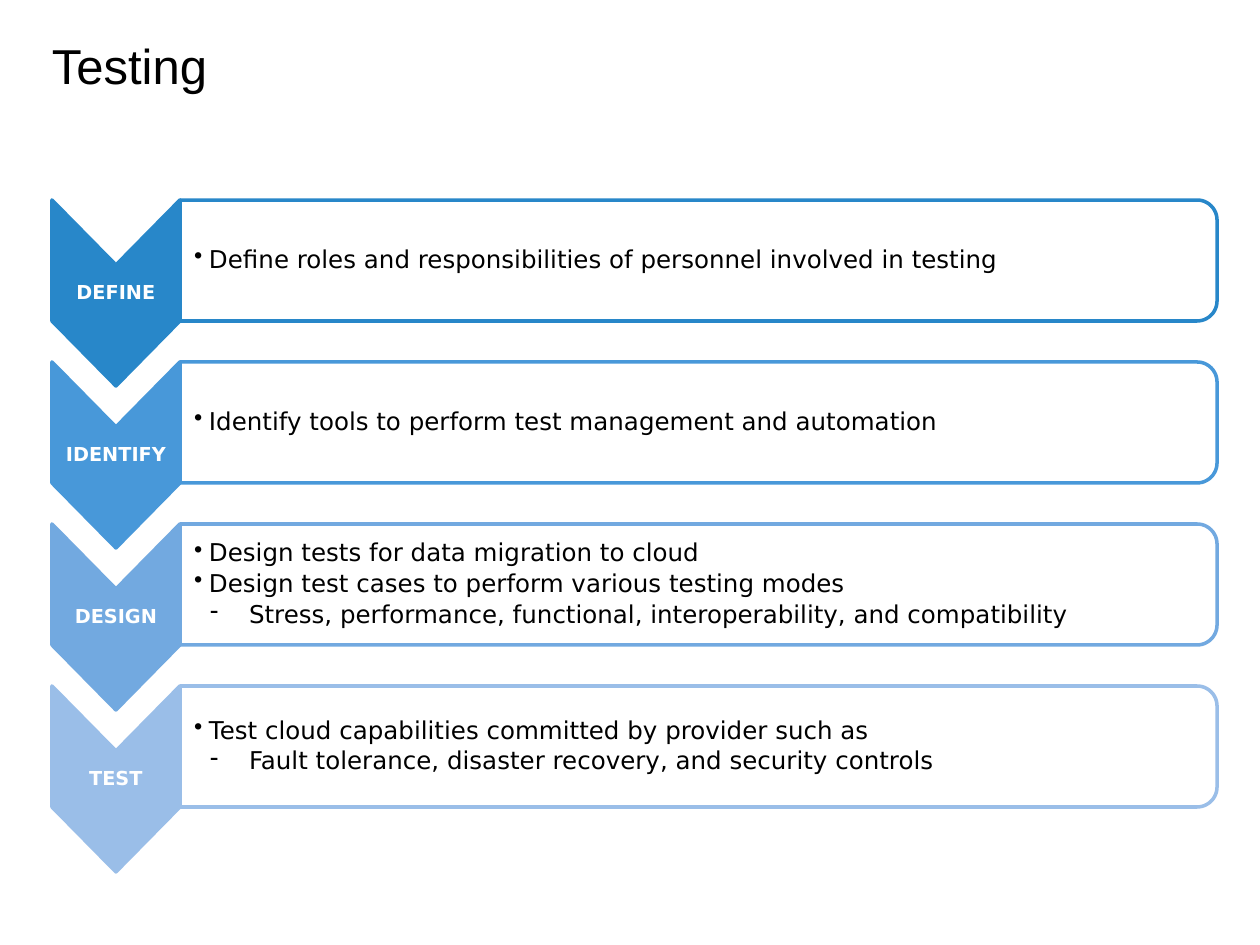
"""Build the Testing slide with four labelled chevron rows."""
from math import cos, pi, sin

from lxml import etree
from pptx import Presentation
from pptx.dml.color import RGBColor
from pptx.enum.text import MSO_ANCHOR, MSO_AUTO_SIZE, PP_ALIGN
from pptx.oxml.ns import qn
from pptx.util import Emu, Pt

TOP, MIDDLE = MSO_ANCHOR.TOP, MSO_ANCHOR.MIDDLE
LEFT, CENTER = PP_ALIGN.LEFT, PP_ALIGN.CENTER
NO_FIT = MSO_AUTO_SIZE.NONE
EMU_PER_PX = 914400 / 126
COLORS = {"black": "000000", "white": "FFFFFF", "define": "2887C9",
          "identify": "4898D9", "design": "72A9E0", "test": "9ABEE8"}
FONTS = {
    "title": {"name": "Arial", "size": Pt(28), "bold": False},
    "label": {"name": "DejaVu Sans", "size": Pt(11), "bold": True},
    "list": {"name": "DejaVu Sans", "size": Pt(14), "bold": False},
}
BULLETS = {1: ("•", 15, 15), 2: ("-", 55, 39)}
ROWS = [
    ("define", [(1, "Define roles and responsibilities of personnel involved in testing")]),
    ("identify", [(1, "Identify tools to perform test management and automation")]),
    ("design", [
        (1, "Design tests for data migration to cloud"),
        (1, "Design test cases to perform various testing modes"),
        (2, "Stress, performance, functional, interoperability, and compatibility")]),
    ("test", [
        (1, "Test cloud capabilities committed by provider such as"),
        (2, "Fault tolerance, disaster recovery, and security controls")]),
]
MARGIN, SPLIT, RIGHT = 52, 180, 1217
FIRST_TOP, PITCH, HEIGHT, NOTCH, RADIUS = 200, 162, 121, 65, 20


def px(value):
    return Emu(round(value * EMU_PER_PX))


def color(name):
    return RGBColor.from_string(COLORS[name])


def apply(target, values):
    for name, value in values.items():
        setattr(target, name, value)


class SlideBuilder:
    """Hold the slide and draw each kind of element in its style."""

    def __init__(self, page):
        self.page = page

    def frame(self, box, insets, anchor):
        sides = ("margin_left", "margin_top", "margin_right", "margin_bottom")
        apply(box.text_frame, {"word_wrap": True, "auto_size": NO_FIT, "vertical_anchor": anchor,
                               **dict(zip(sides, map(px, insets)))})
        return box.text_frame

    def fill_para(self, para, text, style, ink, align, after):
        apply(para, {"alignment": align, "line_spacing": 0.9,
                     "space_before": Pt(0), "space_after": Pt(after)})
        span = para.add_run()
        span.text = text
        apply(span.font, FONTS[style])
        span.font.color.rgb = color(ink)

    def title(self, text):
        box = self.page.shapes.title
        apply(box, {"left": px(MARGIN), "top": px(42), "width": px(1166), "height": px(84)})
        frame = self.frame(box, (0, 0, 0, 0), TOP)
        self.fill_para(frame.paragraphs[0], text, "title", "black", LEFT, 0)

    def outline(self, points, fill, line):
        start, *rest = [(px(x), px(y)) for x, y in points]
        builder = self.page.shapes.build_freeform(*start, scale=1.0)
        builder.add_line_segments(rest, close=True)
        box = builder.convert_to_shape()
        box.shadow.inherit = False
        box.fill.solid()
        box.fill.fore_color.rgb = color(fill)
        box.line.color.rgb = color(line)
        box.line.width = Pt(2)
        return box

    def chevron(self, top, name):
        bottom, center = top + HEIGHT, (MARGIN + SPLIT) / 2
        points = [(SPLIT, top), (SPLIT, bottom), (center, bottom + NOTCH),
                  (MARGIN, bottom), (MARGIN, top), (center, top + NOTCH)]
        frame = self.frame(self.outline(points, name, name), (1, 57, 1, 57), MIDDLE)
        self.fill_para(frame.paragraphs[0], name.upper(), "label", "white", CENTER, 4.5)

    def corner(self, x, y, start):
        angles = [start + step * pi / 24 for step in range(13)]
        return [(x + RADIUS * cos(angle), y + RADIUS * sin(angle)) for angle in angles]

    def panel(self, top, name, items):
        bottom = top + HEIGHT
        points = [(SPLIT, top), *self.corner(RIGHT - RADIUS, top + RADIUS, -pi / 2),
                  *self.corner(RIGHT - RADIUS, bottom - RADIUS, 0), (SPLIT, bottom)]
        box = self.outline(points, "white", name)
        tint = box.element.spPr.find(qn("a:solidFill"))[0]
        etree.SubElement(tint, qn("a:alpha"), val="90000")
        frame = self.frame(box, (14, 6, 6, 6), MIDDLE)
        for index, (level, text) in enumerate(items):
            para = frame.add_paragraph() if index else frame.paragraphs[0]
            self.bullet(para, level)
            self.fill_para(para, text, "list", "black", LEFT, 2.4)

    def bullet(self, para, level):
        mark, indent, hanging = BULLETS[level]
        para.level = level
        properties = para._p.get_or_add_pPr()
        properties.set("marL", str(px(indent)))
        properties.set("indent", str(-px(hanging)))
        etree.SubElement(properties, qn("a:buChar"), char=mark)


def main():
    deck = Presentation()
    deck.slide_width, deck.slide_height = px(1260), px(945)
    builder = SlideBuilder(deck.slides.add_slide(deck.slide_layouts[5]))
    builder.title("Testing")
    for index, (name, items) in enumerate(ROWS):
        top = FIRST_TOP + index * PITCH
        builder.chevron(top, name)
        builder.panel(top, name, items)
    deck.save("out.pptx")


if __name__ == "__main__":
    main()
